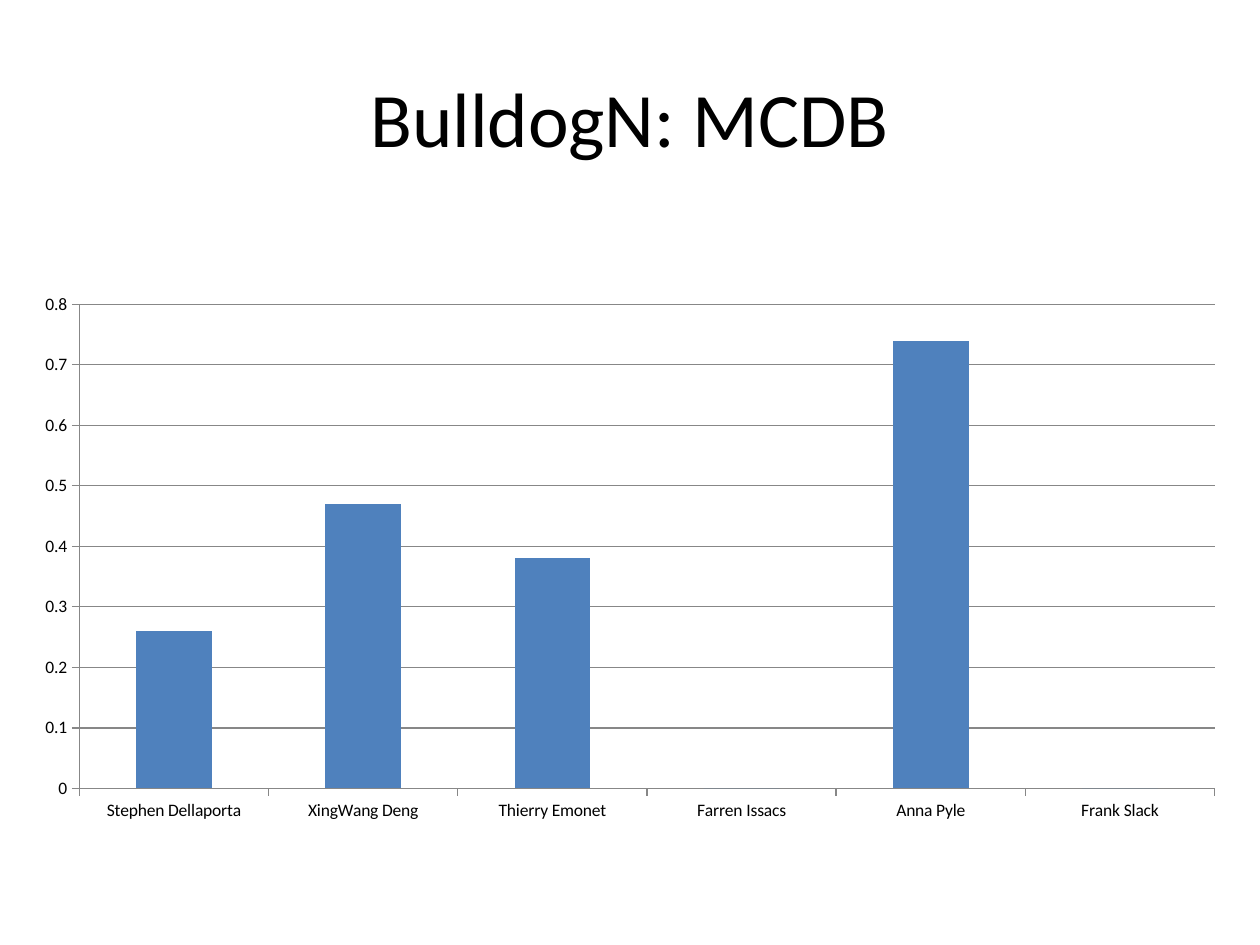
from dataclasses import dataclass

from pptx import Presentation
from pptx.chart.data import CategoryChartData
from pptx.dml.color import RGBColor
from pptx.enum.chart import XL_CHART_TYPE as ChartType, XL_TICK_MARK as TickMark
from pptx.enum.text import MSO_ANCHOR as Anchor, PP_ALIGN as Align
from pptx.util import Inches, Pt


@dataclass(frozen=True)
class Theme:
    font: str = "Calibri"
    ink: RGBColor = RGBColor.from_string("000000")
    paper: RGBColor = RGBColor.from_string("FFFFFF")
    bar: RGBColor = RGBColor.from_string("4F81BD")
    rule: RGBColor = RGBColor.from_string("878787")
    title_size: Pt = Pt(44)
    label_size: Pt = Pt(10)
    rule_width: Pt = Pt(0.75)


THEME = Theme()
SLIDE_WIDTH, SLIDE_HEIGHT = Inches(10), Inches(7.5)
TITLE_BOX = (0.05, 0.04, 0.9, 1 / 6)
USAGE_BOX = (1 / 60, 0.3, 29 / 30, 0.58)
USAGE = {
    "Stephen Dellaporta": 0.26,
    "XingWang Deng": 0.47,
    "Thierry Emonet": 0.38,
    "Farren Issacs": 0,
    "Anna Pyle": 0.74,
    "Frank Slack": 0,
}


def place(box):
    left, top, width, height = box
    return (int(left * SLIDE_WIDTH), int(top * SLIDE_HEIGHT),
            int(width * SLIDE_WIDTH), int(height * SLIDE_HEIGHT))


def style_font(font, size):
    font.name = THEME.font
    font.size = size
    font.color.rgb = THEME.ink


def style_rule(line):
    line.color.rgb = THEME.rule
    line.width = THEME.rule_width


def add_title(slide, box, wording):
    frame = slide.shapes.add_textbox(*place(box)).text_frame
    frame.word_wrap = True
    frame.vertical_anchor = Anchor.MIDDLE
    heading = frame.paragraphs[0]
    heading.alignment = Align.CENTER
    run = heading.add_run()
    run.text = wording
    style_font(run.font, THEME.title_size)


def add_usage_chart(slide, box, usage):
    data = CategoryChartData()
    data.categories = list(usage)
    data.add_series("Series 1", list(usage.values()))
    chart = slide.shapes.add_chart(
        ChartType.COLUMN_CLUSTERED, *place(box), data).chart
    chart.has_title = False
    chart.has_legend = False
    style_font(chart.font, THEME.label_size)

    bars = chart.plots[0]
    bars.gap_width = 150
    bars.vary_by_categories = False
    fill = bars.series[0].format.fill
    fill.solid()
    fill.fore_color.rgb = THEME.bar

    for axis in (chart.category_axis, chart.value_axis):
        axis.major_tick_mark = TickMark.OUTSIDE
        axis.minor_tick_mark = TickMark.NONE
        style_rule(axis.format.line)
    scale = chart.value_axis
    scale.minimum_scale, scale.maximum_scale, scale.major_unit = 0, 0.8, 0.1
    scale.has_major_gridlines = True
    style_rule(scale.major_gridlines.format.line)


def main():
    deck = Presentation()
    deck.slide_width, deck.slide_height = SLIDE_WIDTH, SLIDE_HEIGHT
    slide = deck.slides.add_slide(deck.slide_layouts[6])
    backdrop = slide.background.fill
    backdrop.solid()
    backdrop.fore_color.rgb = THEME.paper
    add_title(slide, TITLE_BOX, "BulldogN: MCDB")
    add_usage_chart(slide, USAGE_BOX, USAGE)
    deck.save("out.pptx")


if __name__ == "__main__":
    main()
